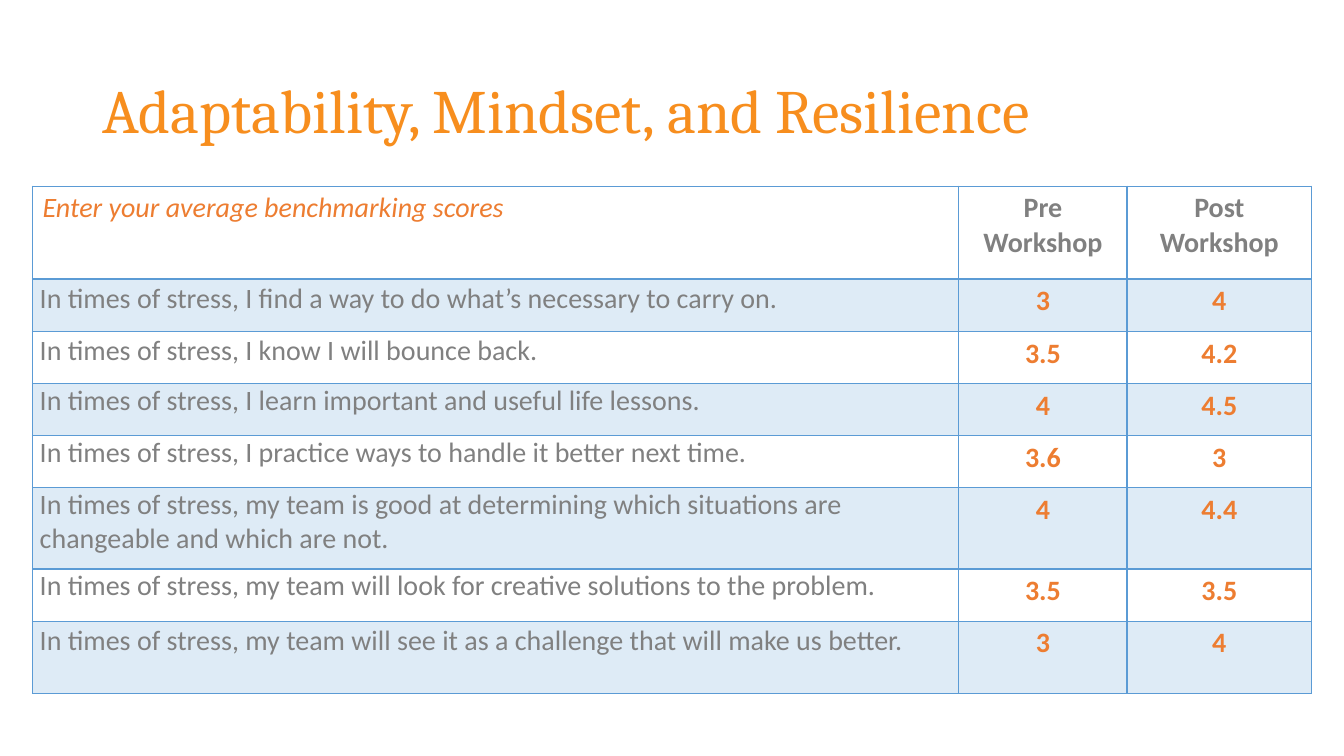
from dataclasses import dataclass

from lxml import etree
from pptx import Presentation
from pptx.dml.color import RGBColor
from pptx.enum.text import MSO_ANCHOR, PP_ALIGN
from pptx.oxml.ns import qn
from pptx.util import Pt

MIDDLE = MSO_ANCHOR.MIDDLE
LEFT, CENTER = PP_ALIGN.LEFT, PP_ALIGN.CENTER


@dataclass(frozen=True)
class Theme:
    """Colours, fonts and type sizes of the slide."""
    title_color: str = "F78E1E"
    accent: str = "ED7D31"
    gray: str = "808080"
    blue: str = "5B9BD5"
    band_opacity: int = 20
    title_font: str = "Cambria"
    body_font: str = "Calibri"
    title_size: int = 44
    body_size: int = 20


class ScoreSlide:
    """Draws the title and the score table on one slide."""

    def __init__(self, deck, theme):
        self.theme = theme
        self.slide = deck.slides.add_slide(deck.slide_layouts[6])

    def style(self, para, font_name, size, color, bold=False, italic=False):
        for span in para.runs:
            font = span.font
            font.name, font.size = font_name, Pt(size)
            font.bold, font.italic = bold, italic
            font.color.rgb = RGBColor.from_string(color)

    def title(self, text, left, top, width, height):
        box = self.slide.shapes.add_textbox(Pt(left), Pt(top), Pt(width), Pt(height))
        frame = box.text_frame
        frame.word_wrap = True
        frame.vertical_anchor = MIDDLE
        frame.text = text
        para = frame.paragraphs[0]
        para.line_spacing = 0.9
        self.style(para, self.theme.title_font, self.theme.title_size, self.theme.title_color)

    def table(self, left, top, columns, rows):
        frame = self.slide.shapes.add_table(
            len(rows), len(columns), Pt(left), Pt(top), Pt(sum(columns)), Pt(sum(rows)))
        table = frame.table
        table.first_row = table.horz_banding = False
        for column, width in zip(table.columns, columns):
            column.width = Pt(width)
        for row, height in zip(table.rows, rows):
            row.height = Pt(height)
        return table

    def cell(self, cell, text, color, align=LEFT, spacing=None, bold=False, italic=False):
        cell.text_frame.text = text
        for para in cell.text_frame.paragraphs:
            para.alignment = align
            if spacing:
                para.line_spacing = spacing
            self.style(para, self.theme.body_font, self.theme.body_size, color, bold, italic)

    def fill(self, cell, banded):
        if not banded:
            cell.fill.background()
            return
        cell.fill.solid()
        cell.fill.fore_color.rgb = RGBColor.from_string(self.theme.blue)
        color = cell._tc.tcPr.find(f"{qn('a:solidFill')}/{qn('a:srgbClr')}")
        etree.SubElement(color, qn("a:alpha"), val=str(self.theme.band_opacity * 1000))

    def borders(self, cell, top=1, bottom=1):
        properties = cell._tc.get_or_add_tcPr()
        widths = {"a:lnL": 1, "a:lnR": 1, "a:lnT": top, "a:lnB": bottom}
        for position, (side, width) in enumerate(widths.items()):
            line = etree.Element(qn(side), w=str(Pt(width)))
            paint = etree.SubElement(line, qn("a:solidFill"))
            etree.SubElement(paint, qn("a:srgbClr"), val=self.theme.blue)
            properties.insert(position, line)


HEADERS = ("Enter your average benchmarking scores", "Pre Workshop", "Post\nWorkshop")
SCORES = (
    ("In times of stress, I find a way to do what’s necessary to carry on.", "3", "4", 1.07),
    ("In times of stress, I know I will bounce back.", "3.5", "4.2", 1.07),
    ("In times of stress, I learn important and useful life lessons.", "4", "4.5", None),
    ("In times of stress, I practice ways to handle it better next time.", "3.6", "3", None),
    ("In times of stress, my team is good at determining which situations are "
     "changeable and which are not.", "4", "4.4", None),
    ("In times of stress, my team will look for creative solutions to the problem.",
     "3.5", "3.5", None),
    ("In times of stress, my team will see it as a challenge that will make us better.",
     "3", "4", 1.07),
)
COLUMN_WIDTHS = (661.7, 120.2, 131.8)
ROW_HEIGHTS = (66.4, *[37.3] * 4, 57.9, 37.3, 52)


def main():
    deck = Presentation()
    deck.slide_width, deck.slide_height = Pt(960), Pt(540)
    theme = Theme()
    page = ScoreSlide(deck, theme)
    page.title("Adaptability, Mindset, and Resilience", 66, 28.8, 828, 104.4)
    table = page.table(23.2, 133, COLUMN_WIDTHS, ROW_HEIGHTS)

    for column, text in enumerate(HEADERS):
        cell = table.cell(0, column)
        if column == 0:
            page.cell(cell, text, theme.accent, italic=True)
        else:
            page.cell(cell, text, theme.gray, CENTER, bold=True)
        page.fill(cell, False)
        page.borders(cell, bottom=2)

    for row, (statement, before, after, spacing) in enumerate(SCORES, 1):
        label = table.cell(row, 0)
        page.cell(label, statement, theme.gray, spacing=spacing)
        label.margin_left = label.margin_right = Pt(5.2)
        label.margin_top = label.margin_bottom = Pt(0)
        for column, score in enumerate((before, after), 1):
            page.cell(table.cell(row, column), score, theme.accent, CENTER, bold=True)
        for cell in table.rows[row].cells:
            page.fill(cell, row % 2 == 1)
            page.borders(cell, top=2 if row == 1 else 1)

    deck.save("out.pptx")


if __name__ == "__main__":
    main()
